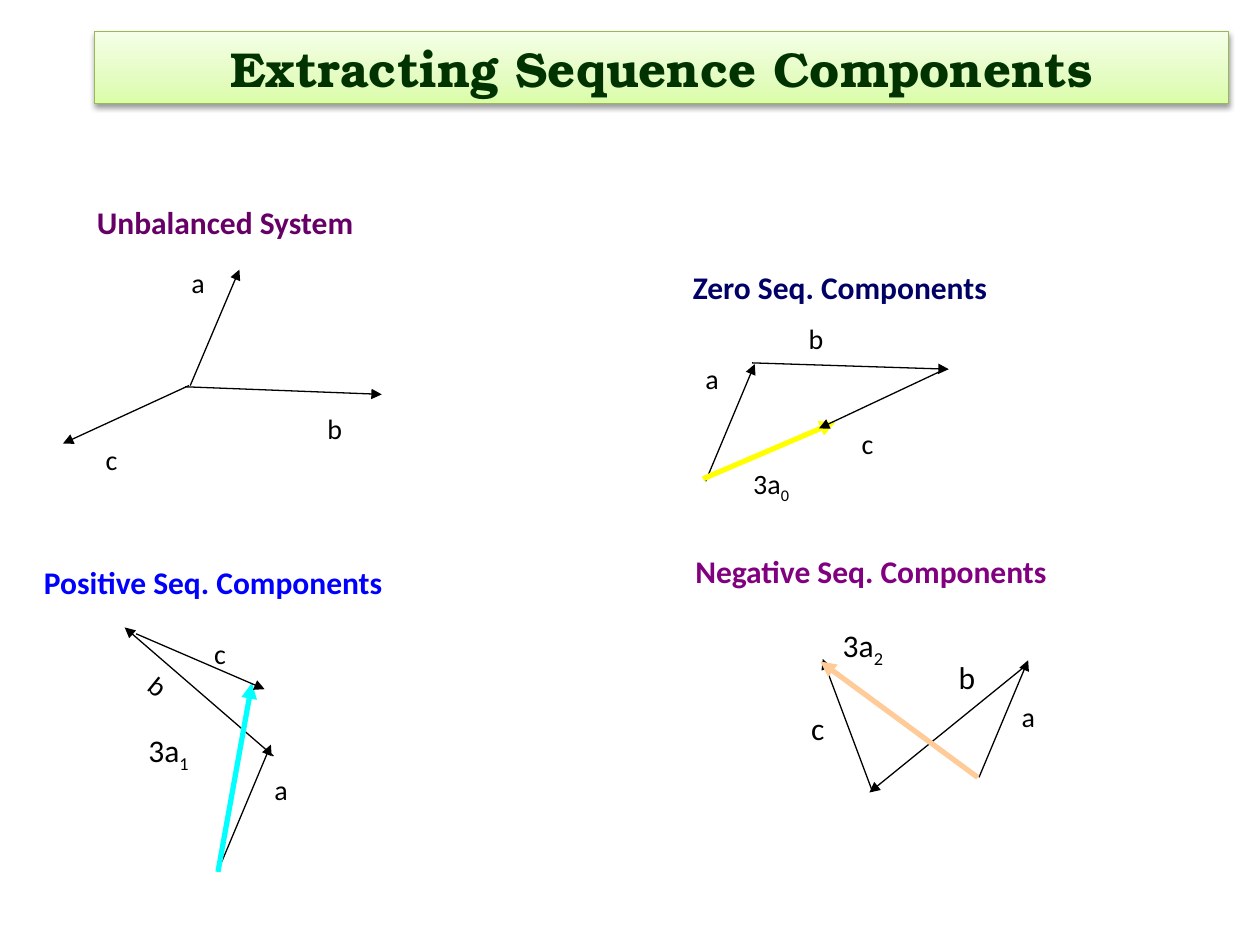
from copy import deepcopy

from lxml.etree import SubElement
from pptx import Presentation
from pptx.dml.color import RGBColor
from pptx.enum.shapes import MSO_CONNECTOR as Connector
from pptx.enum.text import MSO_ANCHOR as Anchor, MSO_AUTO_SIZE as AutoSize, PP_ALIGN as Align
from pptx.oxml import parse_xml
from pptx.oxml.ns import nsdecls, qn
from pptx.util import Emu, Pt

SCALE = 9144
BLACK = RGBColor(0x00, 0x00, 0x00)
YELLOW = RGBColor(0xFF, 0xFF, 0x00)
CYAN = RGBColor(0x00, 0xFF, 0xFF)
PEACH = RGBColor(0xFF, 0xCC, 0x99)
PLUM = RGBColor(0x66, 0x00, 0x66)
NAVY = RGBColor(0x00, 0x00, 0x66)
BLUE = RGBColor(0x00, 0x00, 0xFF)
PURPLE = RGBColor(0x80, 0x00, 0x80)
DARK_GREEN = RGBColor(0x00, 0x33, 0x00)
EDGE_GREEN = RGBColor(0x98, 0xB9, 0x55)
BANNER_STOPS = [
    (0, RGBColor(0xDA, 0xFD, 0xA7)),
    (0.35, RGBColor(0xE4, 0xFC, 0xC2)),
    (1, RGBColor(0xF5, 0xFF, 0xE7)),
]
SHADOW = (
    f'<a:effectLst {nsdecls("a")}><a:outerShdw blurRad="39370" dist="20320" dir="5400000" rotWithShape="0">'
    '<a:srgbClr val="000000"><a:alpha val="38000"/></a:srgbClr></a:outerShdw></a:effectLst>'
)


def px(*lengths):
    """Turn px lengths, 100 to the inch, into EMU."""
    return [Emu(length * SCALE) for length in lengths]


def write(para, text, *, size, color=BLACK, bold=False, font="Calibri", sub=False):
    """Add one formatted span to a paragraph."""
    span = para.add_run()
    span.text = text
    span.font.name = font
    span.font.size = Pt(size)
    span.font.bold = bold
    span.font.color.rgb = color
    if sub:
        span._r.get_or_add_rPr().set("baseline", "-25000")


class PhasorPage:
    """Draws the banner, headings, phasors and labels on one page."""

    def __init__(self, deck):
        """Add a title-only page to the deck."""
        self.page = deck.slides.add_slide(deck.slide_layouts[5])

    def banner(self, text, left, top, width, height):
        """Format the title placeholder as a shaded banner."""
        title = self.page.shapes.title
        title.left, title.top, title.width, title.height = px(left, top, width, height)
        title.fill.gradient()
        title.fill.gradient_angle = 90
        first = title.fill._fill._gradFill.find(qn("a:gsLst"))[0]
        first.addnext(deepcopy(first))
        for stop, (position, color) in zip(title.fill.gradient_stops, BANNER_STOPS):
            stop.position = position
            stop.color.rgb = color
        title.line.color.rgb = EDGE_GREEN
        title.line.width = Pt(0.75)
        title._element.spPr.append(parse_xml(SHADOW))
        frame = title.text_frame
        frame.auto_size = AutoSize.NONE
        frame.vertical_anchor = Anchor.MIDDLE
        para = frame.paragraphs[0]
        para.alignment = Align.CENTER
        write(para, text, size=28, color=DARK_GREEN, bold=True, font="TeX Gyre Bonum")

    def label(self, text, left, top, width, *, sub="", size=16, wrap=False, rotation=0, **style):
        """Place a label, with an optional subscript."""
        height = 40 if size > 16 else 37
        box = self.page.shapes.add_textbox(*px(left, top, width, height))
        box.rotation = rotation
        frame = box.text_frame
        frame.word_wrap = wrap
        frame.auto_size = AutoSize.SHAPE_TO_FIT_TEXT
        para = frame.paragraphs[0]
        para.alignment = Align.LEFT
        write(para, text, size=size, **style)
        if sub:
            write(para, sub, size=size, sub=True, **style)

    def heading(self, text, left, top, width, color):
        """Place the bold heading of a diagram."""
        self.label(text, left, top, width, size=18, color=color, bold=True)

    def phasor(self, x1, y1, x2, y2, *, color=BLACK, weight=0.75):
        """Draw an arrow from the first point to the second."""
        arrow = self.page.shapes.add_connector(Connector.STRAIGHT, *px(x1, y1, x2, y2))
        arrow.line.color.rgb = color
        arrow.line.width = Pt(weight)
        SubElement(arrow.line._get_or_add_ln(), qn("a:tailEnd"), type="triangle")
        SubElement(arrow._element.spPr, qn("a:effectLst"))

    def resultant(self, x1, y1, x2, y2, color):
        """Draw the thick arrow that sums the phasors."""
        self.phasor(x1, y1, x2, y2, color=color, weight=3)


def draw_unbalanced(sheet):
    """Draw the unbalanced system."""
    sheet.heading("Unbalanced System", 67, 156, 258, PLUM)
    sheet.phasor(151, 306, 190, 214)
    sheet.phasor(147, 307, 303, 313)
    sheet.phasor(150, 306, 50, 352)
    sheet.label("a", 142, 206, 32)
    sheet.label("b", 250, 322, 75, wrap=True)
    sheet.label("c", 74, 346, 31)


def draw_zero(sheet):
    """Draw the zero sequence sum."""
    sheet.heading("Zero Seq. Components", 540, 208, 294, NAVY)
    sheet.phasor(560, 382, 599, 289)
    sheet.resultant(558, 380, 663, 335, YELLOW)
    sheet.phasor(597, 288, 753, 293)
    sheet.phasor(750, 293, 650, 340)
    sheet.label("a", 550, 282, 32)
    sheet.label("b", 632, 250, 32)
    sheet.label("c", 674, 334, 31)
    sheet.label("3a", 588, 365, 120, sub="0", wrap=True)


def draw_positive(sheet):
    """Draw the positive sequence sum."""
    sheet.heading("Positive Seq. Components", 25, 442, 335, BLUE)
    sheet.phasor(176, 684, 215, 591)
    sheet.phasor(217, 600, 99, 498)
    sheet.resultant(173, 692, 200, 542, CYAN)
    sheet.phasor(108, 503, 210, 547)
    sheet.label("a", 208, 608, 32)
    sheet.label("q", 67, 517, 75, wrap=True, rotation=218.8)
    sheet.label("c", 160, 500, 31)
    sheet.label("3a", 108, 575, 57, sub="1", size=18)


def draw_negative(sheet):
    """Draw the negative sequence sum."""
    sheet.heading("Negative Seq. Components", 542, 433, 344, PURPLE)
    sheet.phasor(777, 617, 816, 524)
    sheet.phasor(812, 530, 690, 629)
    sheet.phasor(692, 627, 653, 523)
    sheet.resultant(776, 617, 651, 525, PEACH)
    sheet.label("a", 801, 550, 32)
    sheet.label("b", 751, 517, 34, size=18)
    sheet.label("c", 634, 558, 33, size=18)
    sheet.label("3a", 659, 492, 57, sub="2", size=18)


def main():
    """Build and save the deck."""
    deck = Presentation()
    deck.slide_width, deck.slide_height = px(1000, 750)
    sheet = PhasorPage(deck)
    sheet.banner("Extracting Sequence Components", 75, 25, 900, 57)
    for draw in (draw_unbalanced, draw_zero, draw_positive, draw_negative):
        draw(sheet)
    deck.save("out.pptx")


if __name__ == "__main__":
    main()
